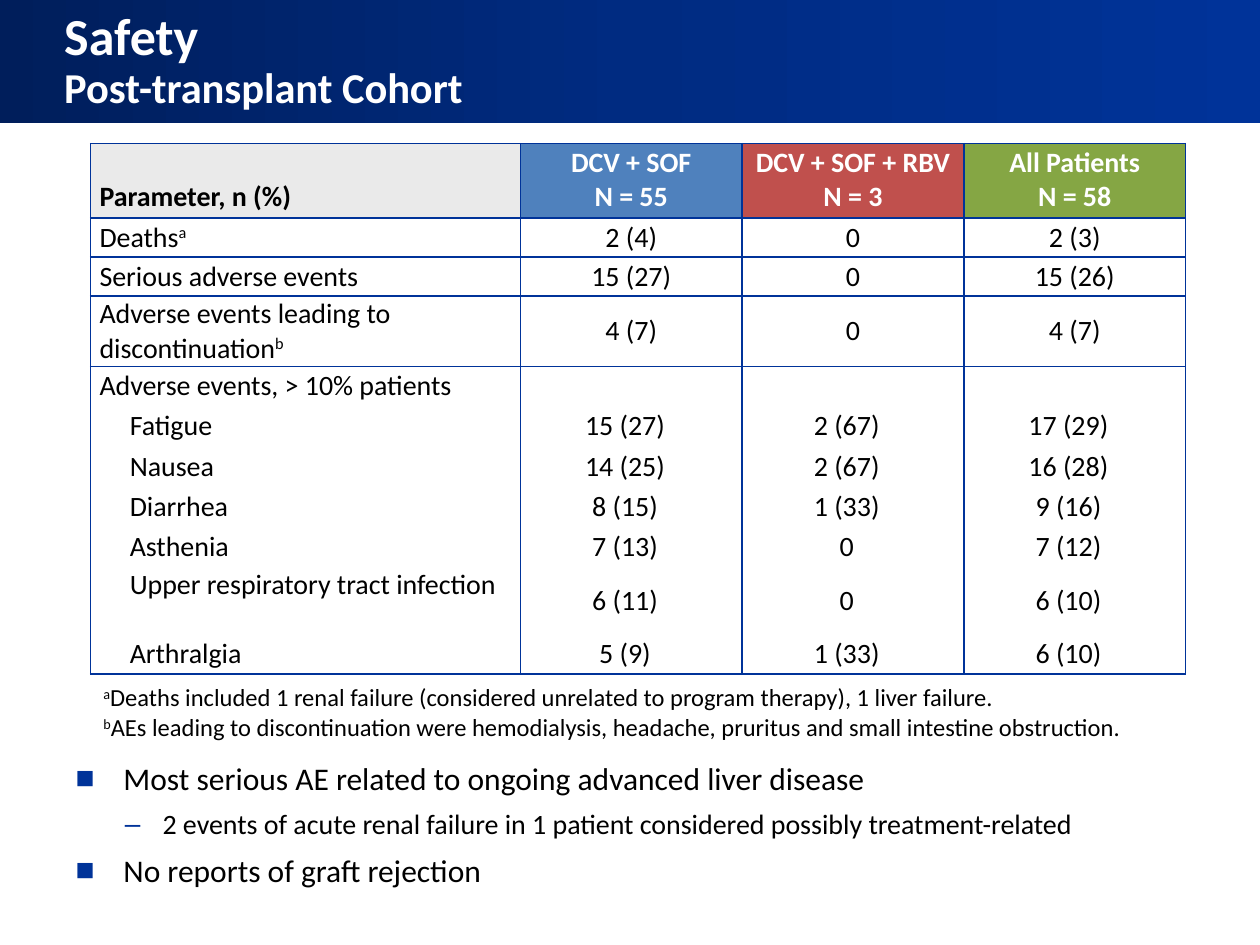
import copy
import pptx
import pptx.util
import pptx.dml.color
import pptx.enum.text
import pptx.oxml
import pptx.oxml.ns

Inches, Pt = pptx.util.Inches, pptx.util.Pt
RGBColor = pptx.dml.color.RGBColor
PP_ALIGN, ANCHOR = pptx.enum.text.PP_ALIGN, pptx.enum.text.MSO_ANCHOR
qn = pptx.oxml.ns.qn

FONT = "Calibri"
BLACK, WHITE = RGBColor(0, 0, 0), RGBColor(255, 255, 255)
BLUE = RGBColor(0x00, 0x33, 0x99)
GRADIENT = [(0, RGBColor(0x00, 0x1E, 0x5B)), (0.5, RGBColor(0x00, 0x2B, 0x81)), (1, BLUE)]
HEAD_FILLS = [RGBColor(0xEA, 0xEA, 0xEA), RGBColor(0x4F, 0x81, 0xBD),
              RGBColor(0xC0, 0x50, 0x4D), RGBColor(0x85, 0xA6, 0x44)]

# Content
TITLE = [("Safety", 29.7), ("Post-transplant Cohort", 24.3)]
HEADER = ["Parameter, n (%)", "DCV + SOF\nN = 55", "DCV + SOF + RBV\nN = 3", "All Patients\nN = 58"]
# label, superscript mark, values, row height
SUMMARY = [
    ("Deaths", "a", ["2 (4)", "0", "2 (3)"], 0.31),
    ("Serious adverse events", "", ["15 (27)", "0", "15 (26)"], 0.31),
    ("Adverse events leading to discontinuation", "b", ["4 (7)", "0", "4 (7)"], 0.56),
    ("Adverse events, > 10% patients", "", ["", "", ""], 0.31),
]
EVENTS = [
    ("Fatigue", "", ["15 (27)", "2 (67)", "17 (29)"], 0.32),
    ("Nausea", "", ["14 (25)", "2 (67)", "16 (28)"], 0.32),
    ("Diarrhea", "", ["8 (15)", "1 (33)", "9 (16)"], 0.32),
    ("Asthenia", "", ["7 (13)", "0", "7 (12)"], 0.32),
    ("Upper respiratory tract infection", "", ["6 (11)", "0", "6 (10)"], 0.53),
    ("Arthralgia", "", ["5 (9)", "1 (33)", "6 (10)"], 0.32),
]
NOTES = [
    ("a", "Deaths included 1 renal failure (considered unrelated to program therapy), 1 liver failure."),
    ("b", "AEs leading to discontinuation were hemodialysis, headache, pruritus and small intestine obstruction."),
]
# text, size, bullet, left margin, hanging indent
BULLETS = [
    ("Most serious AE related to ongoing advanced liver disease", 18, "■", 0.38, 0.38),
    ("2 events of acute renal failure in 1 patient considered possibly treatment-related", 16, "–", 0.69, 0.3),
    ("No reports of graft rejection", 18, "■", 0.38, 0.38),
]
COL_WIDTHS = [3.41, 1.76, 1.76, 1.76]
HEAD_HEIGHT, NOTE_HEIGHT = 0.59, 0.55


def add_text(p, text, size=16, color=BLACK, bold=False, sup=False):
    r = p.add_run()
    r.text = text
    r.font.name, r.font.size, r.font.bold = FONT, Pt(size), bold
    r.font.color.rgb = color
    if sup:
        r._r.get_or_add_rPr().set("baseline", "30000")


def place(sp, left, top, width, height):
    sp.left, sp.top, sp.width, sp.height = map(Inches, (left, top, width, height))


def set_margins(obj, left, top, right, bottom):
    obj.margin_left, obj.margin_top = Inches(left), Inches(top)
    obj.margin_right, obj.margin_bottom = Inches(right), Inches(bottom)


def format_cell(cell, fill, sides, anchor, margins):
    """Draw 1 pt lines on the given sides (letters of LRTB), then fill."""
    tcPr = cell._tc.get_or_add_tcPr()
    for side in "LRTB":
        paint = f'<a:solidFill><a:srgbClr val="{BLUE}"/></a:solidFill>' if side in sides else "<a:noFill/>"
        tcPr.append(pptx.oxml.parse_xml(
            f'<a:ln{side} xmlns:a="{pptx.oxml.ns.nsdecls("a").split(chr(34))[1]}" w="12700">{paint}</a:ln{side}>'))
    cell.fill.solid()
    cell.fill.fore_color.rgb = fill
    cell.vertical_anchor = anchor
    set_margins(cell, *margins)


def add_bullet(p, char, left, hanging):
    pPr = p._p.get_or_add_pPr()
    pPr.set("marL", str(Inches(left)))
    pPr.set("indent", str(-Inches(hanging)))
    ns = pptx.oxml.ns.nsdecls("a")
    for xml in (f'<a:buClr {ns}><a:srgbClr val="{BLUE}"/></a:buClr>',
                f'<a:buFont {ns} typeface="Arial"/>',
                f'<a:buChar {ns} char="{char}"/>'):
        pPr.append(pptx.oxml.parse_xml(xml))


prs = pptx.Presentation()
prs.slide_width, prs.slide_height = Inches(10), Inches(7.5)
s = prs.slides.add_slide(prs.slide_layouts[1])

# Title band
title = s.shapes.title
place(title, 0, 0, 10, 0.98)
title.fill.gradient()
title.fill.gradient_angle = 0
gs_list = title._element.spPr.find(qn("a:gradFill")).find(qn("a:gsLst"))
gs_list.append(copy.deepcopy(gs_list[-1]))
for stop, (position, color) in zip(title.fill.gradient_stops, GRADIENT):
    stop.position, stop.color.rgb = position, color
tf = title.text_frame
tf.auto_size = pptx.enum.text.MSO_AUTO_SIZE.NONE
tf.vertical_anchor = ANCHOR.MIDDLE
set_margins(tf, 0.51, 0.05, 0.43, 0.05)
p = tf.paragraphs[0]
p.alignment, p.line_spacing = PP_ALIGN.LEFT, 0.9
for i, (text, size) in enumerate(TITLE):
    if i:
        p.add_line_break()
    add_text(p, text, size, WHITE, bold=True)

# Bullet list
body = s.placeholders[1]
place(body, 0.5, 5.97, 9.18, 0.88)
tf = body.text_frame
tf.auto_size = pptx.enum.text.MSO_AUTO_SIZE.NONE
for i, (text, size, char, left, hanging) in enumerate(BULLETS):
    p = tf.add_paragraph() if i else tf.paragraphs[0]
    p.space_before, p.space_after = Pt(0), Pt(6)
    add_bullet(p, char, left, hanging)
    add_text(p, text, size)

# Safety table
rows = SUMMARY + EVENTS
heights = [HEAD_HEIGHT] + [row[3] for row in rows] + [NOTE_HEIGHT]
frame = s.shapes.add_table(len(heights), len(COL_WIDTHS), Inches(0.72), Inches(1.14),
                           Inches(sum(COL_WIDTHS)), Inches(sum(heights)))
table = frame.table
table.first_row = table.horz_banding = False
for col, width in zip(table.columns, COL_WIDTHS):
    col.width = Inches(width)
for row, height in zip(table.rows, heights):
    row.height = Inches(height)

for c, (text, fill) in enumerate(zip(HEADER, HEAD_FILLS)):
    cell = table.cell(0, c)
    format_cell(cell, fill, "LRTB", ANCHOR.BOTTOM, (0.07, 0, 0.07, 0.03))
    for i, line in enumerate(text.split("\n")):
        p = cell.text_frame.add_paragraph() if i else cell.text_frame.paragraphs[0]
        p.alignment = PP_ALIGN.CENTER if c else PP_ALIGN.LEFT
        add_text(p, line, color=WHITE if c else BLACK, bold=True)

for n, (label, mark, values, height) in enumerate(rows, 1):
    is_event = n > len(SUMMARY)
    # The adverse event group is one block without lines between its rows
    sides = "LR" + ("" if is_event else "T")
    if n < len(SUMMARY) or n == len(rows):
        sides += "B"
    for c, text in enumerate([label] + values):
        cell = table.cell(n, c)
        margins = (0.07, 0, 0.07, 0)
        if is_event:
            margins = (0.01, 0.01, 0.11, 0) if c else (0.31, 0.01, 0.01, 0)
        top_label = height > 0.5 and is_event and c == 0
        format_cell(cell, WHITE, sides, ANCHOR.TOP if top_label else ANCHOR.MIDDLE, margins)
        p = cell.text_frame.paragraphs[0]
        p.alignment = PP_ALIGN.CENTER if c else PP_ALIGN.LEFT
        if text:
            add_text(p, text)
        if mark and c == 0:
            add_text(p, mark, sup=True)

# Footnotes in the merged last row
last = len(heights) - 1
notes = table.cell(last, 0)
notes.merge(table.cell(last, len(COL_WIDTHS) - 1))
for c in range(len(COL_WIDTHS)):
    format_cell(table.cell(last, c), WHITE, "T", ANCHOR.BOTTOM, (0.1, 0.01, 0.01, 0))
for i, (mark, text) in enumerate(NOTES):
    p = notes.text_frame.add_paragraph() if i else notes.text_frame.paragraphs[0]
    add_text(p, mark, 14, sup=True)
    add_text(p, text, 14)

prs.save("out.pptx")
